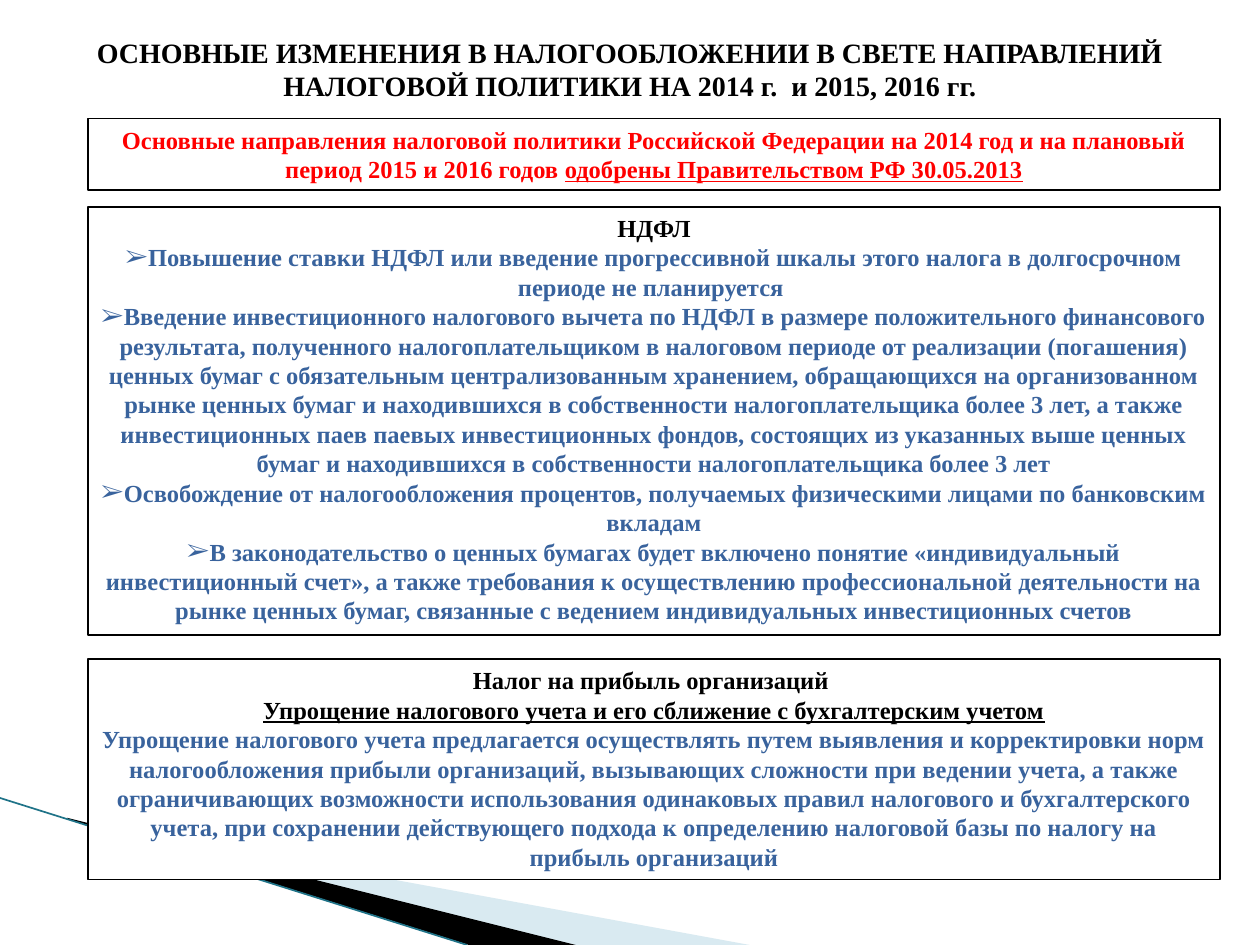
"""Build a slide on the main changes in tax policy for 2014-2016."""
from lxml import etree
from pptx import Presentation
from pptx.dml.color import RGBColor
from pptx.enum.shapes import MSO_CONNECTOR, MSO_SHAPE
from pptx.enum.text import MSO_ANCHOR, MSO_AUTO_SIZE, PP_ALIGN
from pptx.oxml.ns import qn
from pptx.util import Pt

RECT, STRAIGHT = MSO_SHAPE.RECTANGLE, MSO_CONNECTOR.STRAIGHT
TOP, CENTER, NO_FIT = MSO_ANCHOR.TOP, PP_ALIGN.CENTER, MSO_AUTO_SIZE.NONE

COLORS = {
    "black": "000000",
    "white": "FFFFFF",
    "red": "FF0000",
    "blue": "39639D",
    "pale": "A0CBDC",
    "teal": "1F7388",
}
FONT = {"name": "Times New Roman", "bold": True}
FRAME = {"word_wrap": True, "auto_size": NO_FIT, "vertical_anchor": TOP}
FRAME.update(margin_left=Pt(7.2), margin_right=Pt(7.2),
             margin_top=Pt(3.6), margin_bottom=Pt(3.6))
PARAGRAPH = {"alignment": CENTER, "line_spacing": 1.0,
             "space_before": Pt(0), "space_after": Pt(0)}
BOX_LEFT, BOX_WIDTH = 50.4, 646.6

TITLE = ("ОСНОВНЫЕ ИЗМЕНЕНИЯ В НАЛОГООБЛОЖЕНИИ В СВЕТЕ НАПРАВЛЕНИЙ "
         "НАЛОГОВОЙ ПОЛИТИКИ НА 2014 г.  и 2015, 2016 гг.")
POLICY = [
    ("Основные направления налоговой политики Российской Федерации на 2014 год "
     "и на плановый период 2015 и 2016 годов ", "red", False),
    ("одобрены Правительством РФ 30.05.2013", "red", True),
]
INCOME_HEAD = "НДФЛ"
INCOME_ITEMS = [
    "Повышение ставки НДФЛ или введение прогрессивной шкалы этого налога "
    "в долгосрочном периоде не планируется ",
    "Введение инвестиционного налогового вычета по НДФЛ в размере положительного "
    "финансового результата, полученного налогоплательщиком в налоговом периоде "
    "от реализации (погашения) ценных бумаг с обязательным централизованным "
    "хранением, обращающихся на организованном рынке ценных бумаг и находившихся "
    "в собственности налогоплательщика более 3 лет, а также инвестиционных паев "
    "паевых инвестиционных фондов, состоящих из указанных выше ценных бумаг "
    "и находившихся в собственности налогоплательщика более 3 лет",
    "Освобождение от налогообложения процентов, получаемых физическими лицами "
    "по банковским вкладам",
    "В законодательство о ценных бумагах будет включено понятие «индивидуальный "
    "инвестиционный счет», а также требования к осуществлению профессиональной "
    "деятельности на рынке ценных бумаг, связанные с ведением индивидуальных "
    "инвестиционных счетов",
]
PROFIT = [
    ("Налог на прибыль организаций ", "black", False),
    ("Упрощение налогового учета и его сближение с бухгалтерским учетом",
     "black", True),
    ("Упрощение налогового учета предлагается осуществлять путем выявления "
     "и корректировки норм налогообложения прибыли организаций, вызывающих "
     "сложности при ведении учета, а также ограничивающих возможности "
     "использования одинаковых правил налогового и бухгалтерского учета, при "
     "сохранении действующего подхода к определению налоговой базы по налогу "
     "на прибыль организаций", "blue", False),
]


def rgb(name):
    return RGBColor.from_string(COLORS[name])


def apply(obj, values):
    for key, value in values.items():
        setattr(obj, key, value)


def place(s, left, top, width, height):
    apply(s, {"left": Pt(left), "top": Pt(top),
              "width": Pt(width), "height": Pt(height)})


def set_bullet(p, char=None):
    pPr = p._p.get_or_add_pPr()
    pPr.set("marL", "0")
    pPr.set("indent", "0")
    if char:
        etree.SubElement(pPr, qn("a:buFont")).set("typeface", FONT["name"])
        etree.SubElement(pPr, qn("a:buChar")).set("char", char)
    else:
        etree.SubElement(pPr, qn("a:buNone"))


def write(s, paragraphs, size=14):
    tf = s.text_frame
    apply(tf, FRAME)
    for i, (runs, bullet) in enumerate(paragraphs):
        p = tf.add_paragraph() if i else tf.paragraphs[0]
        apply(p, PARAGRAPH)
        set_bullet(p, bullet)
        for text, color, underline in runs:
            r = p.add_run()
            r.text = text
            apply(r.font, dict(FONT, size=Pt(size), underline=underline))
            r.font.color.rgb = rgb(color)


def outline(s):
    s.line.color.rgb = rgb("black")
    s.line.width = Pt(1)


def add_box(slide, top, height, paragraphs):
    s = slide.shapes.add_shape(RECT, Pt(BOX_LEFT), Pt(top), Pt(BOX_WIDTH), Pt(height))
    s.shadow.inherit = False
    s.fill.solid()
    s.fill.fore_color.rgb = rgb("white")
    outline(s)
    write(s, paragraphs)


def add_wedge(slide, points, color, alpha=None):
    corners = [(Pt(x), Pt(y)) for x, y in points]
    builder = slide.shapes.build_freeform(*corners[0])
    builder.add_line_segments(corners[1:], close=True)
    s = builder.convert_to_shape()
    s.shadow.inherit = False
    s.fill.solid()
    s.fill.fore_color.rgb = rgb(color)
    s.line.fill.background()
    if alpha:
        clr = s._element.spPr.find(qn("a:solidFill")).find(qn("a:srgbClr"))
        etree.SubElement(clr, qn("a:alpha")).set("val", str(alpha * 1000))


def add_line(slide, x1, y1, x2, y2):
    s = slide.shapes.add_connector(STRAIGHT, Pt(x1), Pt(y1), Pt(x2), Pt(y2))
    s.line.color.rgb = rgb("teal")
    s.line.width = Pt(0.95)
    etree.SubElement(s._element.spPr, qn("a:effectLst"))


def main():
    prs = Presentation()
    prs.slide_width, prs.slide_height = Pt(720), Pt(540)
    slide = prs.slides.add_slide(prs.slide_layouts[1])

    add_wedge(slide, [(39.6, 468.7), (428.4, 540), (328.3, 540), (39.6, 468)],
              "pale", 40)
    add_wedge(slide, [(38.2, 467.3), (329, 540), (268, 540), (38.9, 468)], "black")
    add_line(slide, 0, 456, 267, 540)

    title, body = slide.placeholders
    place(title, 33.8, 16.6, 652.4, 46)
    write(title, [([(TITLE, "black", False)], None)], 16)

    place(body, BOX_LEFT, 118.1, BOX_WIDTH, 244.8)
    outline(body)
    write(body, [([(INCOME_HEAD, "black", False)], None)]
          + [([(item, "blue", False)], "➢") for item in INCOME_ITEMS])

    add_box(slide, 376.6, 126, [([run], None) for run in PROFIT])
    add_box(slide, 67.7, 41, [(POLICY, None)])
    prs.save("out.pptx")


if __name__ == "__main__":
    main()
